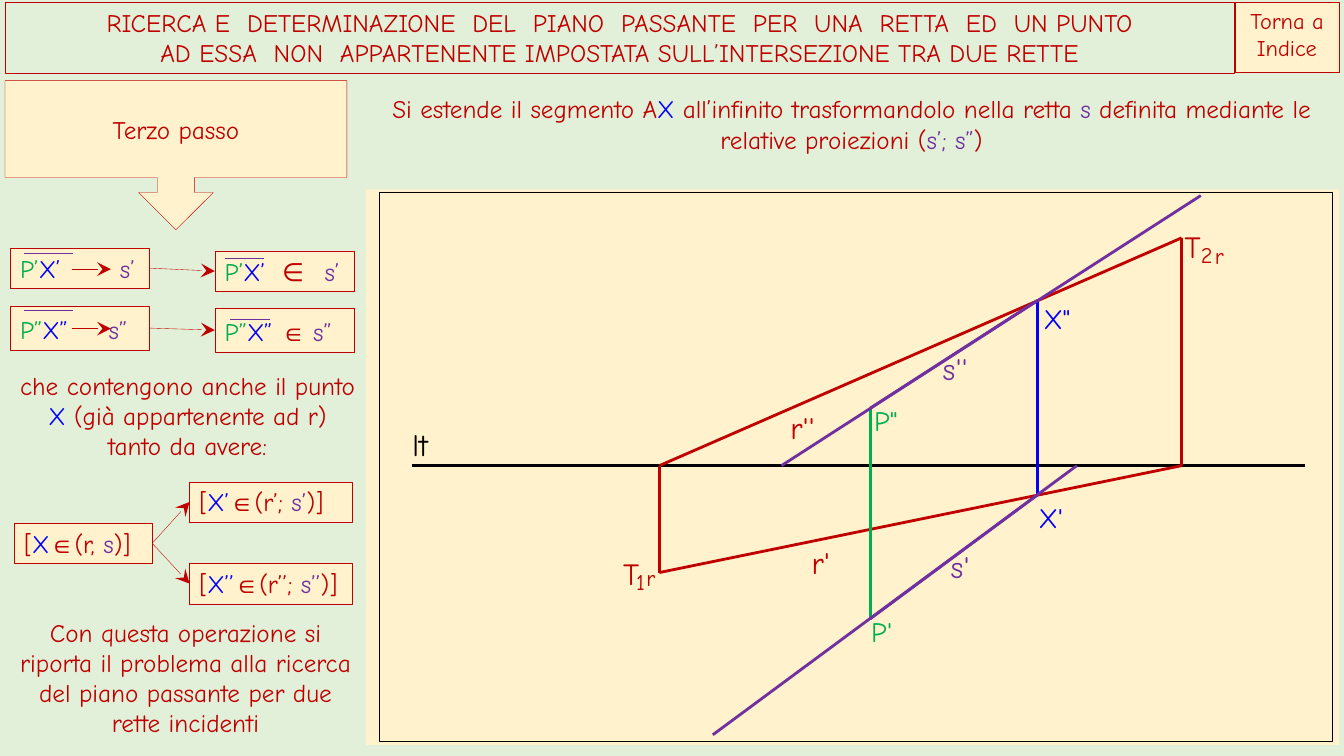
from lxml import etree
from pptx import Presentation
from pptx import util as u
from pptx.dml.color import RGBColor
from pptx.enum import shapes, text
from pptx.oxml import ns

HUES = {
    "mint": "E2F0D9", "cream": "FFF2CC", "red": "C00000", "green": "00B050",
    "blue": "0000FF", "plum": "7030A0", "black": "000000",
}
FONT = "Comic Neue"
LEFT, MID = text.PP_ALIGN.LEFT, text.PP_ALIGN.CENTER
TOP, CORE, BASE = text.MSO_ANCHOR.TOP, text.MSO_ANCHOR.MIDDLE, text.MSO_ANCHOR.BOTTOM


def hue(name):
    return RGBColor.from_string(HUES[name])


def child(node, tag, **attrs):
    return etree.SubElement(node, ns.qn(tag), attrs)


def write(shape, paras, size=18, align=LEFT, anchor=TOP, wrap=True,
          inset=None, space=None, after=None, tabs=()):
    frame = shape.text_frame
    frame.auto_size = text.MSO_AUTO_SIZE.NONE
    frame.word_wrap = wrap
    frame.vertical_anchor = anchor
    if inset is not None:
        frame.margin_left = frame.margin_right = u.Inches(inset)
        frame.margin_top = frame.margin_bottom = u.Inches(inset)
    for i, runs in enumerate(paras):
        para = frame.add_paragraph() if i else frame.paragraphs[0]
        para.alignment = align
        if space:
            para.line_spacing = space
        if after:
            para.space_after = u.Pt(after)
        if tabs:
            stops = child(para._p.get_or_add_pPr(), "a:tabLst")
            for stop in tabs:
                child(stops, "a:tab", pos=str(u.Inches(stop)), algn="l")
        for words, tint, *face in runs:
            run = para.add_run()
            run.text = words
            run.font.size = u.Pt(size)
            run.font.name = face[0] if face else FONT
            run.font.color.rgb = hue(tint)


def edge(line, tint, width):
    line.color.rgb = hue(tint)
    line.width = u.Pt(width)


def place(shape, spot):
    shape.left, shape.top, shape.width, shape.height = map(u.Inches, spot)


def box(slide, spot, paras=(), fill="cream", line="red", width=0.25,
        kind=shapes.MSO_SHAPE.RECTANGLE, **form):
    shape = slide.shapes.add_shape(kind, *map(u.Inches, spot))
    shape.shadow.inherit = False
    if fill:
        shape.fill.solid()
        shape.fill.fore_color.rgb = hue(fill)
    else:
        shape.fill.background()
    if line:
        edge(shape.line, line, width)
    else:
        shape.line.fill.background()
    if paras:
        write(shape, paras, **form)
    return shape


def note(slide, spot, runs):
    area = slide.shapes.add_textbox(*map(u.Inches, spot))
    write(area, [runs], align=MID)


def label(slide, spot, words, tint, size):
    box(slide, spot, [[(words, tint)]], line=None,
        size=size, inset=0, wrap=False, anchor=TOP)


def rule(slide, start, end, tint, width=0, arrow=False):
    line = slide.shapes.add_connector(
        shapes.MSO_CONNECTOR.STRAIGHT, *map(u.Inches, (*start, *end)))
    edge(line.line, tint, width)
    if arrow:
        child(line.line._get_or_add_ln(), "a:tailEnd", type="stealth", w="lg", len="lg")
    child(line._element.spPr, "a:effectLst")
    return line


def link(slide, source, target):
    line = rule(slide, (0, 0), (1, 1), "red", 0.25, True)
    line.begin_connect(source, 3)
    line.end_connect(target, 1)


def header(slide):
    title = slide.shapes.title
    place(title, (0.05, 0.02, 12.19, 0.71))
    edge(title.line, "red", 0.25)
    write(title, [
        [("RICERCA E  DETERMINAZIONE  DEL  PIANO  PASSANTE  PER  UNA  RETTA  ED  UN PUNTO", "red")],
        [("AD ESSA  NON  APPARTENENTE IMPOSTATA SULL’INTERSEZIONE TRA DUE RETTE", "red")],
    ], align=MID)
    box(slide, (12.25, 0.02, 1.03, 0.7), [[("Torna a Indice", "red")]],
        size=16, align=MID)
    box(slide, (0.05, 0.8, 3.39, 1.48), [[("Terzo passo", "red")]], align=MID,
        anchor=CORE, kind=shapes.MSO_SHAPE.DOWN_ARROW_CALLOUT)
    note(slide, (3.64, 0.88, 9.61, 0.71), [
        ("Si estende il segmento A", "red"), ("X ", "blue"),
        ("all’infinito trasformandolo nella retta ", "red"), ("s", "plum"),
        (" definita mediante le relative proiezioni (", "red"),
        ("s’; s”", "plum"), (")", "red")])


def drawing(slide):
    box(slide, (3.63, 1.88, 9.65, 5.51), line=None)
    box(slide, (3.76, 1.91, 9.46, 5.45), fill=None, line="black", width=0)
    for spot, words, tint, size in (
        ((4.09, 4.22, 0.32, 0.51), "lt", "black", 22),
        ((8.64, 6.1, 0.25, 0.34), "P'", "green", 20),
        ((8.67, 4, 0.26, 0.34), 'P"', "green", 20),
        ((10.35, 2.99, 0.32, 0.34), 'X"', "blue", 20),
        ((10.3, 4.97, 0.31, 0.34), "X'", "blue", 20),
        ((11.75, 2.26, 0.21, 0.37), "T", "red", 22),
        ((11.91, 2.39, 0.14, 0.27), "2", "red", 16),
        ((12.05, 2.4, 0.11, 0.27), "r", "red", 16),
        ((6.18, 5.5, 0.21, 0.37), "T", "red", 22),
        ((6.31, 5.64, 0.1, 0.27), "1", "red", 16),
        ((6.41, 5.6, 0.11, 0.27), "r", "red", 16),
        ((8.05, 5.39, 0.27, 0.37), "r'", "red", 22),
        ((7.84, 4.06, 0.39, 0.37), "r''", "red", 22),
        ((9.35, 3.47, 0.39, 0.37), "s''", "plum", 22),
        ((9.43, 5.43, 0.27, 0.37), "s'", "plum", 22),
    ):
        label(slide, spot, words, tint, size)
    ground = 4.62
    west, east = (6.54, ground), (11.72, ground)
    t_one, t_two = (6.54, 5.68), (11.72, 2.36)
    p_one, p_two = (8.63, 6.14), (8.63, 4.05)
    x_one, x_two = (10.29, 4.91), (10.29, 2.98)
    for start, end, tint in (
        ((4.09, ground), (12.94, ground), "black"),
        (west, t_one, "red"), (t_two, east, "red"),
        (west, t_two, "red"), (east, t_one, "red"),
        (p_two, p_one, "green"), (x_two, x_one, "blue"),
        (x_two, p_two, "plum"), (x_one, p_one, "plum"),
        ((11.91, 1.94), (7.75, ground), "plum"),
        ((10.68, ground), (7.07, 7.29), "plum"),
    ):
        rule(slide, start, end, tint)


def steps(slide):
    loose = {"anchor": BASE, "space": 1.15, "after": 10}
    one = box(slide, (0.1, 2.46, 1.38, 0.4),
              [[("P’", "green"), ("X’\t", "blue"), ("s’", "plum")]],
              anchor=BASE, tabs=(0.99,))
    one_in = box(slide, (2.13, 2.49, 1.38, 0.4),
                 [[("P’", "green"), ("X’\t", "blue"), ("∈\t", "red"), ("s’", "plum")]],
                 anchor=BASE, tabs=(0.57, 0.99))
    two = box(slide, (0.1, 3.04, 1.38, 0.43),
              [[("P”", "green"), ("X”\t", "blue"), ("s”", "plum")]],
              tabs=(0.88,), **loose)
    two_in = box(slide, (2.13, 3.06, 1.38, 0.43),
                 [[("P”", "green"), ("X” ", "blue"), ("∈ ", "red", "Arial"), ("s”", "plum")]],
                 **loose)
    link(slide, one, one_in)
    link(slide, two, two_in)
    for y in (2.67, 3.26):
        rule(slide, (0.71, y), (1.1, y), "red", 0.25, True)
    for x, y, span in ((0.24, 2.51, 0.48), (2.23, 2.56, 0.39),
                       (0.24, 3.08, 0.48), (2.28, 3.17, 0.4)):
        rule(slide, (x, y), (x + span, y), "plum", 0.5)


def member(slide, spot, point, first, second):
    return box(slide, spot, [[
        ("[", "red"), (point, "blue"), ("∈", "red", "Arial"),
        (first, "red"), (second, "plum"), (")]", "red")]])


def result(slide):
    note(slide, (0.09, 3.62, 3.54, 1.01), [
        ("che contengono anche il punto ", "red"), ("X ", "blue"),
        ("(già appartenente ad r) tanto da avere:", "red")])
    root = member(slide, (0.14, 5.19, 1.37, 0.4), "X", "(r, ", "s")
    for y, mark in ((4.78, "’"), (5.59, "’’")):
        leaf = member(slide, (1.88, y, 1.61, 0.4), "X" + mark, f"(r{mark}; ", "s" + mark)
        link(slide, root, leaf)
    note(slide, (0.04, 6.07, 3.6, 1.31), [
        ("Con questa operazione si riporta il problema alla ricerca "
         "del piano passante per due rette incidenti", "red")])


def main():
    deck = Presentation()
    deck.slide_width, deck.slide_height = u.Inches(13.33), u.Inches(7.5)
    slide = deck.slides.add_slide(deck.slide_layouts[5])
    slide.background.fill.solid()
    slide.background.fill.fore_color.rgb = hue("mint")
    header(slide)
    drawing(slide)
    steps(slide)
    result(slide)
    deck.save("out.pptx")


if __name__ == "__main__":
    main()
